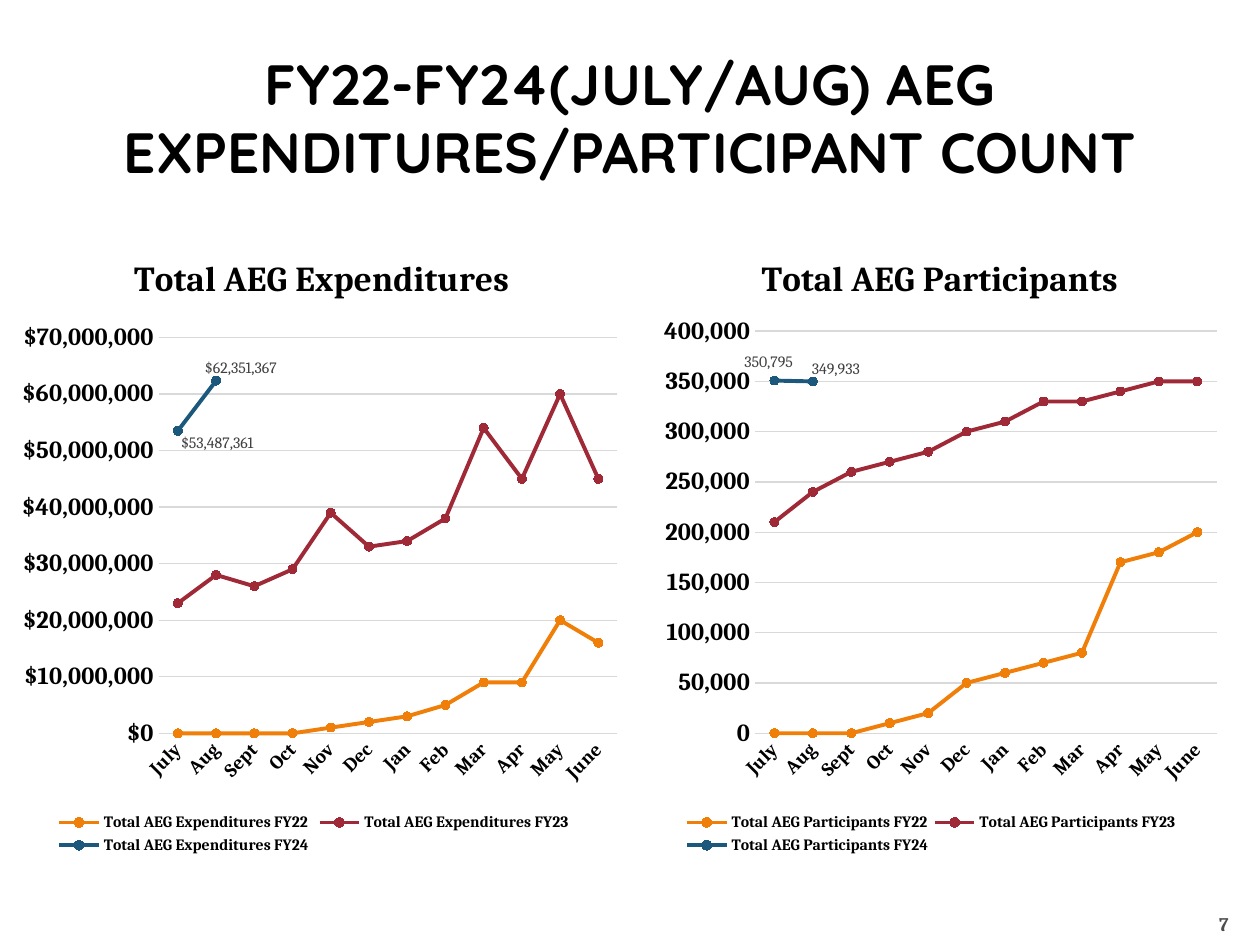
from lxml import etree
from pptx import Presentation
from pptx import util as u
from pptx.chart.data import CategoryChartData
from pptx.dml.color import RGBColor
from pptx.enum import chart as ch
from pptx.enum import text as tx
from pptx.oxml.ns import qn

THEME = dict(
    head="Quicksand", body="Cambria", ink="000000", grey="4D4D4D", note="404040",
    rule="D9D9D9", lines=("F07F09", "9F2936", "1B587C"),
    title=32.4, chart=20, value=14, month=11, page=11, key=9, label=9, base=10,
)
TITLE = "FY22-FY24(JULY/AUG) AEG EXPENDITURES/PARTICIPANT COUNT"
MONTHS = "July Aug Sept Oct Nov Dec Jan Feb Mar Apr May June".split()
YEARS = ("FY22", "FY23", "FY24")
CHARTS = [
    dict(
        name="Total AEG Expenditures", fmt='"$"#,##0', box=(0.2, 4.65, 12.5, 12.67),
        top=70_000_000, step=10_000_000, unit=1_000_000,
        rows=[
            [0, 0, 0, 0, 1, 2, 3, 5, 9, 9, 20, 16],
            [23, 28, 26, 29, 39, 33, 34, 38, 54, 45, 60, 45],
        ],
        last=[53487361, 62351367],
        plot=(0.24, 0.17, 0.74, 0.63), head=(0.19, 0.03), key=(0.07, 0.92, 0.84, 0.08),
        tags=[("RIGHT", -0.01, 0.02), ("ABOVE", 0.04, 0.01)],
    ),
    dict(
        name="Total AEG Participants", fmt="#,##0", box=(13.13, 4.65, 11.63, 12.67),
        top=400_000, step=50_000, unit=10_000,
        rows=[
            [0, 0, 0, 1, 2, 5, 6, 7, 8, 17, 18, 20],
            [21, 24, 26, 27, 28, 30, 31, 33, 33, 34, 35, 35],
        ],
        last=[350795, 349933],
        plot=(0.18, 0.16, 0.8, 0.64), head=(0.18, 0.03), key=(0.05, 0.92, 0.87, 0.08),
        tags=[("ABOVE", -0.01, 0), ("ABOVE", 0.04, 0.01)],
    ),
]


def style(font, size, color=THEME["ink"], bold=True, face=THEME["body"]):
    font.size, font.bold, font.name = u.Pt(size), bold, face
    font.color.rgb = RGBColor.from_string(color)


def stroke(line, color, width):
    line.color.rgb = RGBColor.from_string(color)
    line.width = u.Pt(width)


def write(slide, words, box, align, anchor, base=0.13, **form):
    frame = slide.shapes.add_textbox(*map(u.Cm, box)).text_frame
    frame.word_wrap = True
    frame.vertical_anchor = anchor
    frame.margin_left = frame.margin_right = 0
    frame.margin_top, frame.margin_bottom = u.Cm(0.13), u.Cm(base)
    para = frame.paragraphs[0]
    para.alignment = align
    run = para.add_run()
    run.text = words
    style(run.font, **form)


def place(node, after, spot, inner=False, edge=True):
    for old in node.findall(qn("c:layout")):
        node.remove(old)
    lay = etree.Element(qn("c:layout"))
    man = etree.SubElement(lay, qn("c:manualLayout"))
    pairs = [("layoutTarget", "inner")] if inner else []
    if edge:
        pairs += [("xMode", "edge"), ("yMode", "edge")]
    pairs += zip("xywh", spot)
    for tag, val in pairs:
        etree.SubElement(man, qn("c:" + tag)).set("val", str(val))
    if after is None:
        node.insert(0, lay)
    else:
        node.find(qn("c:" + after)).addnext(lay)


def axes(chart, data):
    cat, val = chart.category_axis, chart.value_axis
    for axis, size in ((cat, THEME["month"]), (val, THEME["value"])):
        axis.major_tick_mark = axis.minor_tick_mark = ch.XL_TICK_MARK.NONE
        style(axis.tick_labels.font, size)
    stroke(cat.format.line, THEME["rule"], 0.75)
    body = cat.tick_labels.font._element.getparent().getparent().getparent()
    body.find(qn("a:bodyPr")).set("rot", "-2700000")
    val.format.line.fill.background()
    val.has_major_gridlines = True
    stroke(val.major_gridlines.format.line, THEME["rule"], 0.75)
    val.minimum_scale, val.maximum_scale = 0, data["top"]
    val.major_unit = data["step"]
    val.tick_labels.number_format = data["fmt"]
    val.tick_labels.number_format_is_linked = False


def labels(series, data):
    tags = series.data_labels
    tags.show_value = True
    tags.number_format, tags.number_format_is_linked = data["fmt"], False
    style(tags.font, THEME["label"], THEME["note"], False)
    for i, (side, *shift) in enumerate(data["tags"]):
        tag = series.points[i].data_label
        style(tag.font, THEME["label"], THEME["note"], False)
        tag.position = getattr(ch.XL_LABEL_POSITION, side)
        node = tags._element.findall(qn("c:dLbl"))[i]
        place(node, "idx", shift, edge=False)


def graph(slide, data):
    feed = CategoryChartData(number_format=data["fmt"])
    feed.categories = MONTHS
    rows = [[n * data["unit"] for n in row] for row in data["rows"]]
    rows.append(data["last"] + [None] * (len(MONTHS) - len(data["last"])))
    for year, row in zip(YEARS, rows):
        feed.add_series(f"{data['name']} {year}", row)
    kind = ch.XL_CHART_TYPE.LINE_MARKERS
    chart = slide.shapes.add_chart(kind, *map(u.Cm, data["box"]), feed).chart
    style(chart.font, THEME["base"], bold=False)
    chart.has_title = True
    run = chart.chart_title.text_frame.paragraphs[0].add_run()
    run.text = data["name"]
    style(run.font, THEME["chart"])
    place(chart.chart_title._element, "tx", data["head"])
    axes(chart, data)
    chart.has_legend = True
    key = chart.legend
    key.position, key.include_in_layout = ch.XL_LEGEND_POSITION.BOTTOM, False
    style(key.font, THEME["key"])
    place(key._element, "legendPos", data["key"])
    plot = chart.plots[0]
    plot.vary_by_categories = False
    place(plot._element.getparent(), None, data["plot"], inner=True)
    for series, color in zip(plot.series, THEME["lines"]):
        series.smooth = False
        stroke(series.format.line, color, 2.25)
        mark = series.marker
        mark.style, mark.size = ch.XL_MARKER_STYLE.CIRCLE, 5
        mark.format.fill.solid()
        mark.format.fill.fore_color.rgb = RGBColor.from_string(color)
        stroke(mark.format.line, color, 0.75)
    labels(plot.series[2], data)


def main():
    """Build the slide with two yearly line charts side by side."""
    deck = Presentation()
    deck.slide_width, deck.slide_height = u.Cm(25.4), u.Cm(19.05)
    slide = deck.slides.add_slide(deck.slide_layouts[6])
    write(slide, TITLE, (1.9, 0.76, 21.6, 3.18), tx.PP_ALIGN.CENTER,
          tx.MSO_ANCHOR.MIDDLE, size=THEME["title"], face=THEME["head"])
    write(slide, "7", (23.5, 17.83, 1.27, 1.02), tx.PP_ALIGN.RIGHT,
          tx.MSO_ANCHOR.BOTTOM, base=0, size=THEME["page"], color=THEME["grey"])
    for data in CHARTS:
        graph(slide, data)
    deck.save("out.pptx")


if __name__ == "__main__":
    main()
